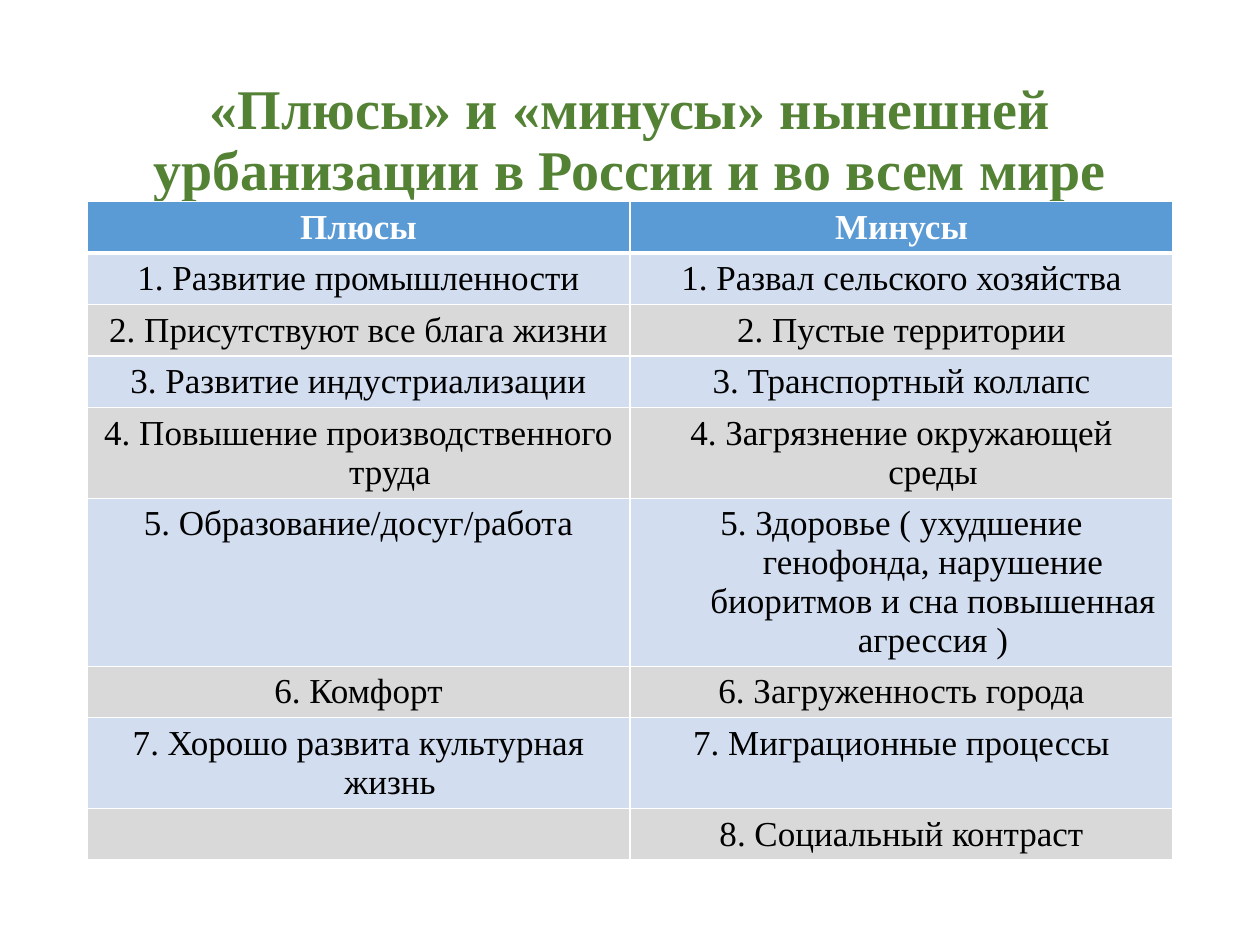
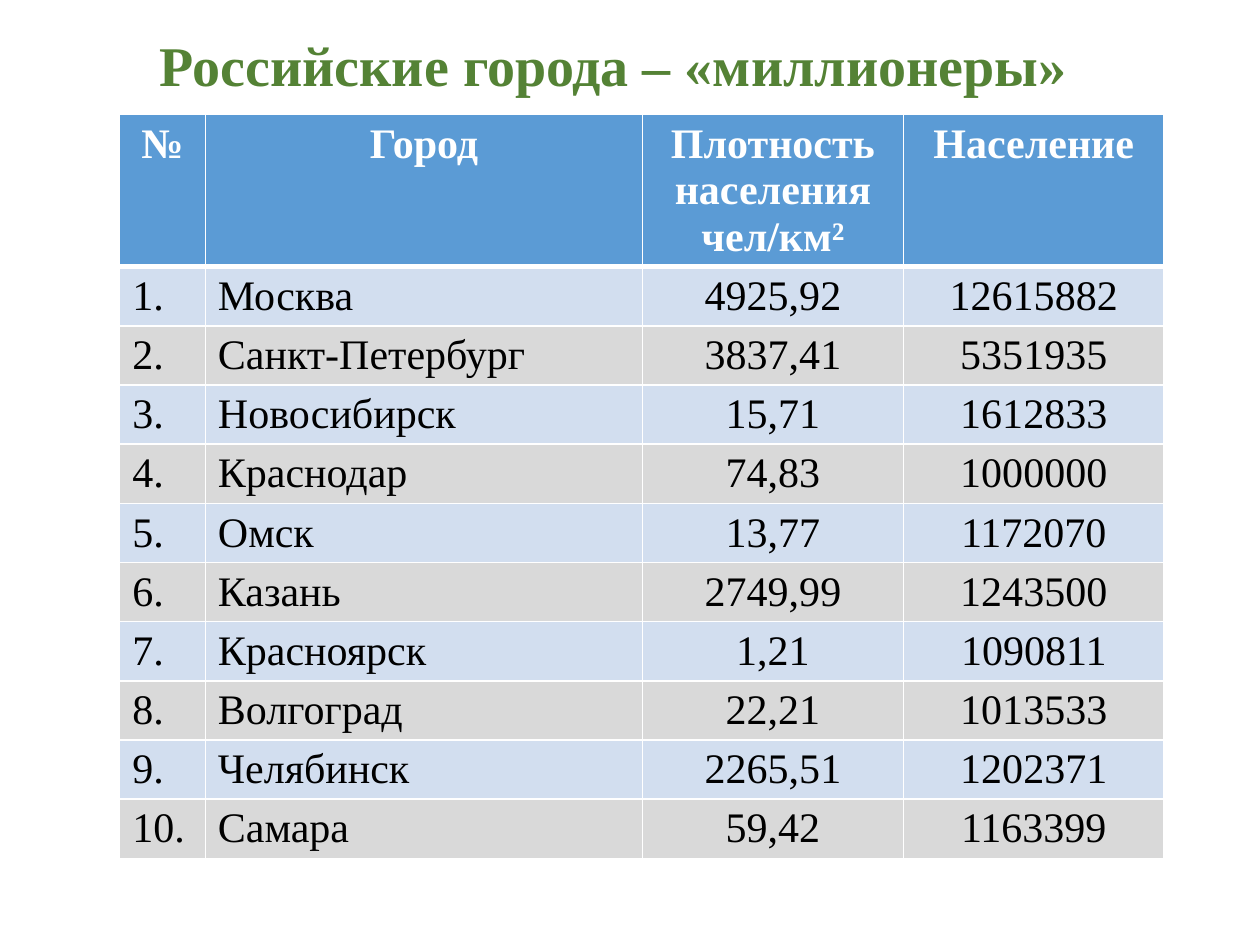
from dataclasses import dataclass

from lxml.etree import SubElement
from pptx import Presentation
from pptx.dml.color import RGBColor
from pptx.enum.text import MSO_ANCHOR, MSO_AUTO_SIZE, PP_ALIGN
from pptx.oxml.ns import qn
from pptx.slide import Slide
from pptx.table import _Cell
from pptx.util import Inches, Pt


@dataclass(frozen=True)
class Theme:
    font: str = "Times New Roman"
    title: str = "548235"
    header: str = "5B9BD5"
    odd_row: str = "D2DEEF"
    even_row: str = "D9D9D9"
    border: str = "FFFFFF"
    header_text: str = "FFFFFF"
    text: str = "000000"
    title_size: int = 32
    thin: int = 1
    thick: int = 3


@dataclass(frozen=True)
class Box:
    left: float
    top: float
    width: float
    height: float


@dataclass(frozen=True)
class TableSpec:
    left: float
    top: float
    columns: list[float]
    row_heights: list[float]
    rows: list[tuple[str, ...]]
    size: int
    left_columns: int = 0  # leading columns whose body text is left-aligned
    hanging: float = 0


THEME = Theme()

PROS_AND_CONS = TableSpec(
    left=0.69, top=1.6, columns=[4.31] * 2,
    row_heights=[0.4] * 4 + [0.72, 1.33, 0.4, 0.72, 0.4],
    size=20, hanging=0.5,
    rows=[
        ("Плюсы", "Минусы"),
        ("1. Развитие промышленности", "1. Развал сельского хозяйства"),
        ("2. Присутствуют все блага жизни", "2. Пустые территории"),
        ("3. Развитие индустриализации", "3. Транспортный коллапс"),
        ("4. Повышение производственного труда", "4. Загрязнение окружающей среды"),
        ("5. Образование/досуг/работа",
         "5. Здоровье ( ухудшение генофонда, нарушение биоритмов и сна повышенная агрессия )"),
        ("6. Комфорт", "6. Загруженность города"),
        ("7. Хорошо развита культурная жизнь", "7. Миграционные процессы"),
        ("", "8. Социальный контраст"),
    ],
)

CITIES = [
    ("Москва", "4925,92", "12615882"),
    ("Санкт-Петербург", "3837,41", "5351935"),
    ("Новосибирск", "15,71", "1612833"),
    ("Краснодар", "74,83", "1000000"),
    ("Омск", "13,77", "1172070"),
    ("Казань", "2749,99", "1243500"),
    ("Красноярск", "1,21", "1090811"),
    ("Волгоград", "22,21", "1013533"),
    ("Челябинск", "2265,51", "1202371"),
    ("Самара", "59,42", "1163399"),
]

CITY_TABLE = TableSpec(
    left=0.95, top=0.91, columns=[0.68, 3.47, 2.07, 2.07],
    row_heights=[1.2] + [0.47] * len(CITIES),
    size=24, left_columns=2,
    rows=[("№", "Город", "Плотность населения чел/км²", "Население")]
    + [(f"{i}.", *city) for i, city in enumerate(CITIES, 1)],
)


def set_title(s: Slide, text: str, box: Box) -> None:
    sp = s.shapes.title
    sp.left, sp.top = Inches(box.left), Inches(box.top)
    sp.width, sp.height = Inches(box.width), Inches(box.height)
    tf = sp.text_frame
    tf.text = text
    tf.word_wrap = True
    tf.auto_size = MSO_AUTO_SIZE.NONE
    tf.vertical_anchor = MSO_ANCHOR.MIDDLE
    p = tf.paragraphs[0]
    p.alignment = PP_ALIGN.CENTER
    p.line_spacing = 0.9
    font = p.runs[0].font
    font.name, font.size, font.bold = THEME.font, Pt(THEME.title_size), True
    font.color.rgb = RGBColor.from_string(THEME.title)


def set_borders(cell: _Cell, row: int) -> None:
    """Thin white lines, with a thick one between header and body."""
    tc_pr = cell._tc.get_or_add_tcPr()
    widths = {
        "lnL": THEME.thin,
        "lnR": THEME.thin,
        "lnT": THEME.thick if row == 1 else THEME.thin,
        "lnB": THEME.thick if row == 0 else THEME.thin,
    }
    for tag, width in widths.items():
        line = SubElement(tc_pr, qn(f"a:{tag}"), w=str(Pt(width)))
        fill = SubElement(line, qn("a:solidFill"))
        SubElement(fill, qn("a:srgbClr"), val=THEME.border)


def format_cell(cell: _Cell, row: int, col: int, spec: TableSpec) -> None:
    is_header = row == 0
    body_fill = THEME.odd_row if row % 2 else THEME.even_row
    set_borders(cell, row)
    cell.fill.solid()
    cell.fill.fore_color.rgb = RGBColor.from_string(THEME.header if is_header else body_fill)

    p = cell.text_frame.paragraphs[0]
    is_left = not is_header and col < spec.left_columns
    p.alignment = PP_ALIGN.LEFT if is_left else PP_ALIGN.CENTER
    if spec.hanging:
        p_pr = p._p.get_or_add_pPr()
        p_pr.set("marL", str(Inches(spec.hanging)))
        p_pr.set("indent", str(-Inches(spec.hanging)))
    for r in p.runs:
        r.font.name, r.font.size, r.font.bold = THEME.font, Pt(spec.size), is_header
        color = THEME.header_text if is_header else THEME.text
        r.font.color.rgb = RGBColor.from_string(color)


def add_table(s: Slide, spec: TableSpec) -> None:
    table = s.shapes.add_table(
        len(spec.rows), len(spec.columns), Inches(spec.left), Inches(spec.top),
        Inches(sum(spec.columns)), Inches(sum(spec.row_heights)),
    ).table
    for column, width in zip(table.columns, spec.columns):
        column.width = Inches(width)
    for i, (values, height) in enumerate(zip(spec.rows, spec.row_heights)):
        table.rows[i].height = Inches(height)
        for j, value in enumerate(values):
            cell = table.cell(i, j)
            cell.text_frame.text = value
            format_cell(cell, i, j, spec)


def main() -> None:
    prs = Presentation()
    prs.slide_width, prs.slide_height = Inches(10), Inches(7.5)
    title_only = prs.slide_layouts[5]

    # Pros and cons of urbanisation
    s = prs.slides.add_slide(title_only)
    set_title(s, "«Плюсы» и «минусы» нынешней урбанизации в России и во всем мире",
              Box(0.69, 0.4, 8.62, 1.45))
    add_table(s, PROS_AND_CONS)

    # Cities with over a million people
    s = prs.slides.add_slide(title_only)
    set_title(s, "Российские города – «миллионеры»", Box(0.43, 0.27, 8.88, 0.54))
    add_table(s, CITY_TABLE)

    prs.save("out.pptx")


if __name__ == "__main__":
    main()
